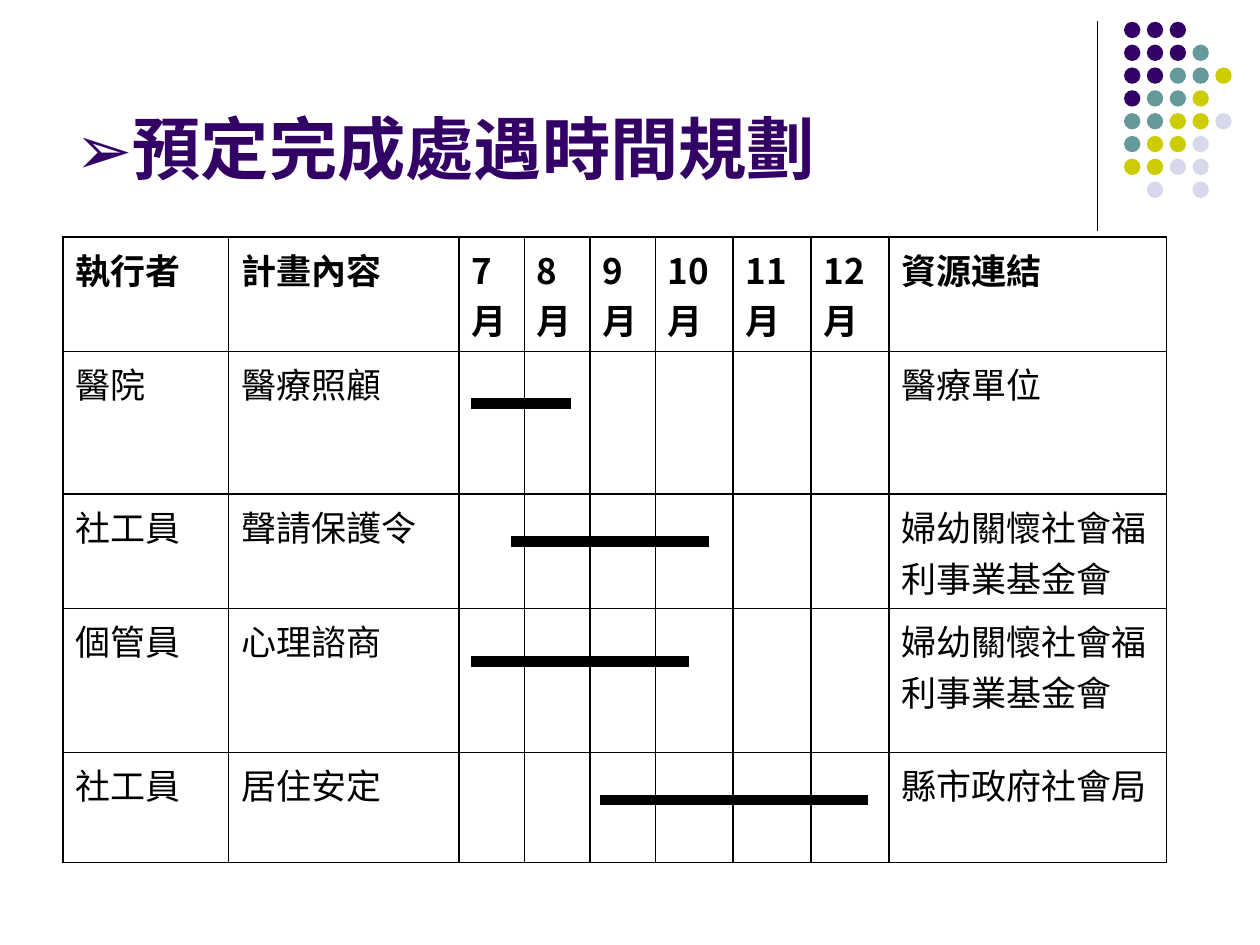
from dataclasses import dataclass

from lxml import etree
from pptx import Presentation
from pptx.dml.color import RGBColor
from pptx.enum import shapes, text
from pptx.oxml import ns
from pptx.util import Cm, Pt


@dataclass(frozen=True)
class Theme:
    ink: str = "000000"
    purple: str = "330066"
    teal: str = "669999"
    yellow: str = "CCCC00"
    lilac: str = "D8D8EC"
    latin: str = "Arial"
    cjk: str = "Noto Sans CJK SC"
    title_size: int = 39
    cell_size: int = 20


theme = Theme()


def style_text(tf, latin, size, color, bold):
    for p in tf.paragraphs:
        for r in p.runs:
            r.font.name = latin
            r.font.size = Pt(size)
            r.font.bold = bold
            r.font.color.rgb = RGBColor.from_string(color)
            ea = etree.SubElement(r._r.get_or_add_rPr(), ns.qn("a:ea"))
            ea.set("typeface", theme.cjk)


def add_line(x1, y1, x2, y2, width):
    line = s.shapes.add_connector(
        shapes.MSO_CONNECTOR.STRAIGHT, Cm(x1), Cm(y1), Cm(x2), Cm(y2))
    line.line.color.rgb = RGBColor.from_string(theme.ink)
    line.line.width = Pt(width)
    etree.SubElement(line._element.spPr, ns.qn("a:effectLst"))


prs = Presentation()
prs.slide_width, prs.slide_height = Cm(25.4), Cm(19.05)
s = prs.slides.add_slide(prs.slide_layouts[5])

add_line(22.12, 0.43, 22.12, 4.65, 0.75)

dot_colors = {"P": theme.purple, "T": theme.teal, "Y": theme.yellow, "L": theme.lilac}
dot_rows = ["PPP", "PPPT", "PPTTY", "PTTY", "TTYYL", "TYYL", "YYLL", " L L"]
pitch, dot_size = 0.46, 0.33
for i, dot_row in enumerate(dot_rows):
    for j, key in enumerate(dot_row):
        if key == " ":
            continue
        dot = s.shapes.add_shape(
            shapes.MSO_SHAPE.OVAL, Cm(22.66 + j * pitch), Cm(0.44 + i * pitch),
            Cm(dot_size), Cm(dot_size))
        dot.shadow.inherit = False
        dot.fill.solid()
        dot.fill.fore_color.rgb = RGBColor.from_string(dot_colors[key])
        dot.line.fill.background()

title = s.shapes.title
title.left, title.top, title.width, title.height = Cm(1.27), Cm(0.33), Cm(22.22), Cm(3.6)
tf = title.text_frame
tf.text = "➢預定完成處遇時間規劃"
tf.word_wrap = True
tf.vertical_anchor = text.MSO_ANCHOR.BOTTOM
tf.paragraphs[0].alignment = text.PP_ALIGN.LEFT
style_text(tf, theme.latin, theme.title_size, theme.purple, True)

months = [f"{month}\n月" for month in range(7, 13)]
no_months = [""] * len(months)
tasks = [
    ("醫院", "醫療照顧", "醫療單位"),
    ("社工員", "聲請保護令", "婦幼關懷社會福利事業基金會"),
    ("個管員", "心理諮商", "婦幼關懷社會福利事業基金會"),
    ("社工員", "居住安定", "縣市政府社會局"),
]
rows = [["執行者", "計畫內容", *months, "資源連結"]]
rows += [[worker, plan, *no_months, resource] for worker, plan, resource in tasks]
col_widths = [3.34, 4.64] + [1.32] * 3 + [1.57] * 3 + [5.6]
row_heights = [2.3, 2.88, 2.3, 2.9, 2.22]

table = s.shapes.add_table(
    len(rows), len(col_widths), Cm(1.27), Cm(4.78),
    Cm(sum(col_widths)), Cm(sum(row_heights))).table
table.first_row = table.horz_banding = False
for column, width in zip(table.columns, col_widths):
    column.width = Cm(width)
for row, height in zip(table.rows, row_heights):
    row.height = Cm(height)

for i, row in enumerate(rows):
    for j, value in enumerate(row):
        cell = table.cell(i, j)
        cell.text_frame.text = value
        style_text(cell.text_frame, theme.cjk, theme.cell_size, theme.ink, i == 0)
        tcPr = cell._tc.get_or_add_tcPr()
        for side in ("lnL", "lnR", "lnT", "lnB"):
            border = etree.SubElement(tcPr, ns.qn(f"a:{side}"), w=str(Pt(1)))
            fill = etree.SubElement(border, ns.qn("a:solidFill"))
            etree.SubElement(fill, ns.qn("a:srgbClr"), val=theme.ink)
        cell.fill.background()

schedule = [(9.5, 11.51, 8.13), (10.31, 14.3, 10.92), (9.5, 13.89, 13.34), (12.09, 17.5, 16.13)]
for start, end, y in schedule:
    add_line(start, y, end, y, 6)

prs.save("out.pptx")
